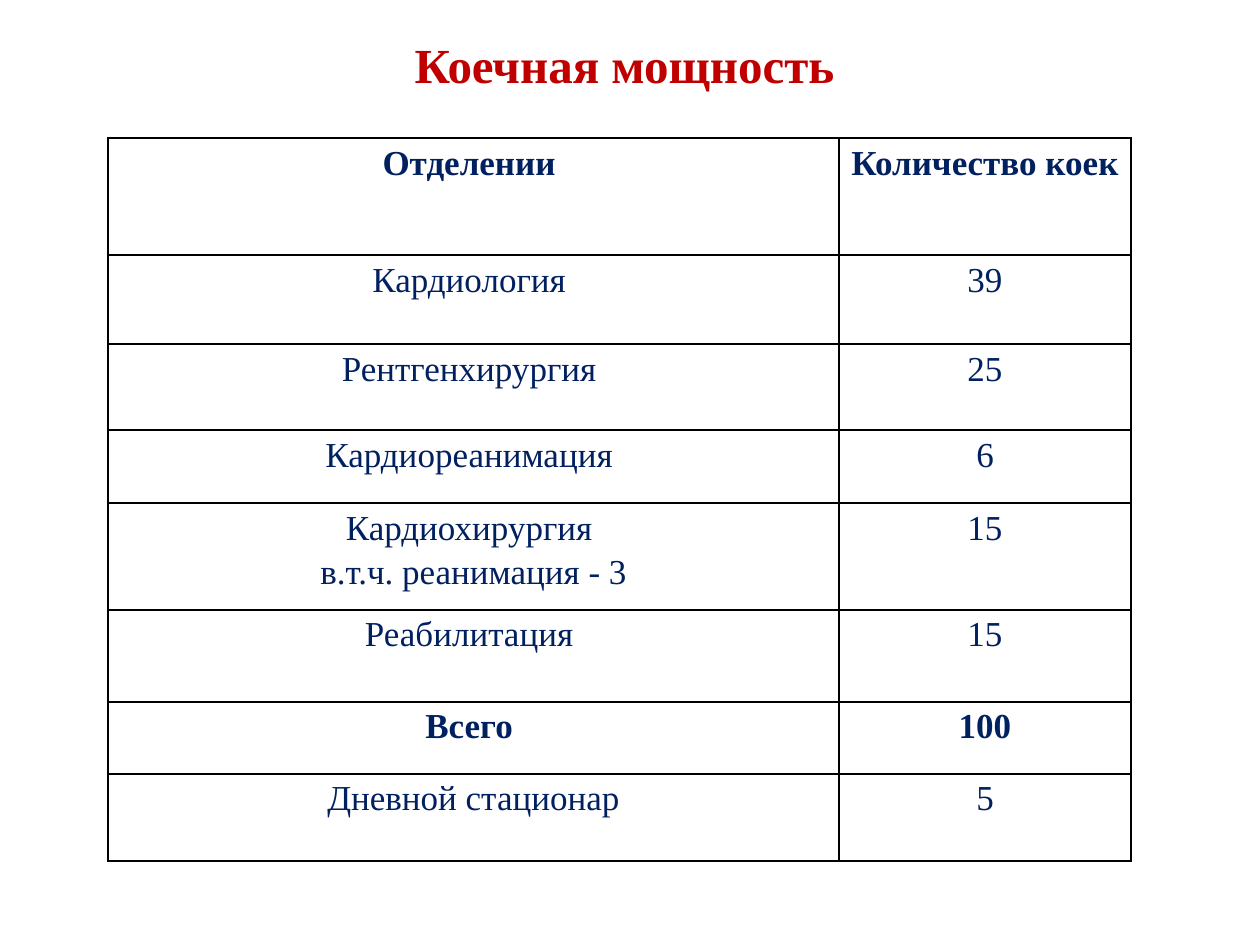
from lxml import etree
from pptx import Presentation
from pptx.dml.color import RGBColor
from pptx.enum.text import MSO_ANCHOR, PP_ALIGN
from pptx.oxml.ns import qn
from pptx.util import Emu, Pt

CENTER = PP_ALIGN.CENTER
TOP, MIDDLE = MSO_ANCHOR.TOP, MSO_ANCHOR.MIDDLE
FONT = "Times New Roman"
RED, NAVY, BLACK = "C00000", "002060", "000000"


def px(n):
    return Emu(round(n * 914400 / 126))


def color(code):
    return RGBColor.from_string(code)


class Deck:
    def __init__(self, wide, high):
        self.prs = Presentation()
        self.prs.slide_width, self.prs.slide_height = px(wide), px(high)
        self.slide = self.prs.slides.add_slide(self.prs.slide_layouts[5])

    def style(self, para, size, code, bold):
        para.alignment = CENTER
        font = para.font
        font.name, font.size, font.bold = FONT, Pt(size), bold
        font.color.rgb = color(code)

    def title(self, text, left, top, wide, high):
        shape = self.slide.shapes.title
        shape.left, shape.top = px(left), px(top)
        shape.width, shape.height = px(wide), px(high)
        frame = shape.text_frame
        frame.text = text
        frame.vertical_anchor = MIDDLE
        self.style(frame.paragraphs[0], 28, RED, True)

    def border(self, cell):
        props = cell._tc.get_or_add_tcPr()
        for i, side in enumerate(("lnL", "lnR", "lnT", "lnB")):
            line = etree.Element(qn(f"a:{side}"), w=str(Pt(1)))
            fill = etree.SubElement(line, qn("a:solidFill"))
            etree.SubElement(fill, qn("a:srgbClr"), val=BLACK)
            props.insert(i, line)

    def cell(self, cell, text, bold):
        cell.text = text
        cell.fill.background()
        cell.vertical_anchor = TOP
        cell.margin_left = cell.margin_right = px(9)
        cell.margin_top = cell.margin_bottom = 0
        for para in cell.text_frame.paragraphs:
            self.style(para, 20, NAVY, bold)
            para.line_spacing = 1.15
        self.border(cell)

    def table(self, rows, left, top, cols):
        high = sum(row[0] for row in rows)
        table = self.slide.shapes.add_table(
            len(rows), len(cols), px(left), px(top), px(sum(cols)), px(high)
        ).table
        table.first_row = table.horz_banding = False
        for col, wide in zip(table.columns, cols):
            col.width = px(wide)
        for r, (high, bold, *texts) in enumerate(rows):
            table.rows[r].height = px(high)
            for c, text in enumerate(texts):
                self.cell(table.cell(r, c), text, bold)


# Row height, bold, ward, beds
ROWS = [
    (117, True, "Отделении ", "Количество коек"),
    (89, False, "Кардиология ", "39"),
    (86, False, "Рентгенхирургия ", "25"),
    (73, False, "Кардиореанимация ", "6"),
    (107, False, "Кардиохирургия \nв.т.ч. реанимация - 3", "15"),
    (92, False, "Реабилитация ", "15"),
    (72, True, "Всего ", "100"),
    (87, False, "Дневной стационар", "5"),
]


def main():
    deck = Deck(1260, 945)
    # Bed table
    deck.table(ROWS, 108, 138, (731, 292))
    # Heading
    deck.title("Коечная мощность ", 20, 29, 1221, 69)
    deck.prs.save("out.pptx")


if __name__ == "__main__":
    main()
